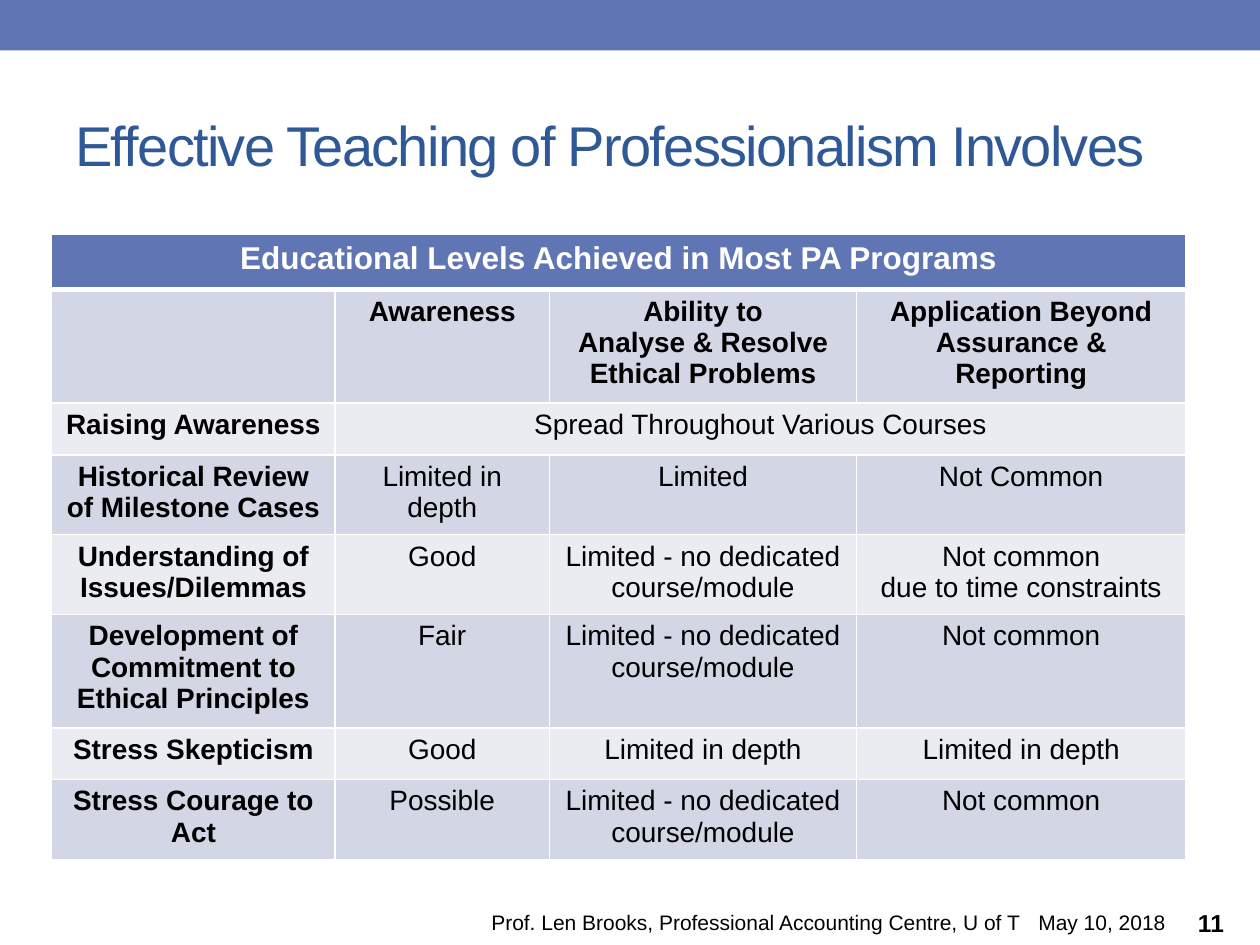
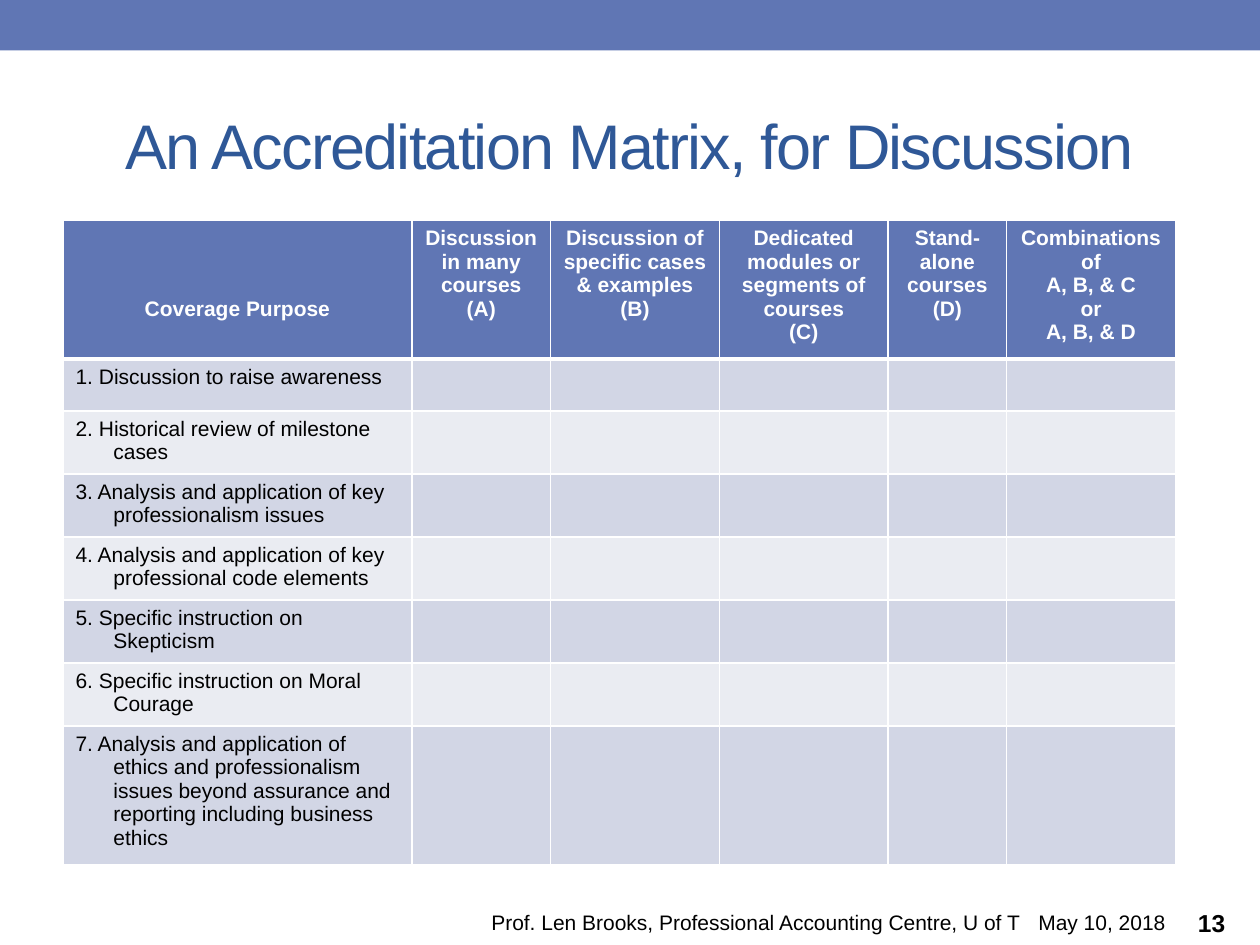
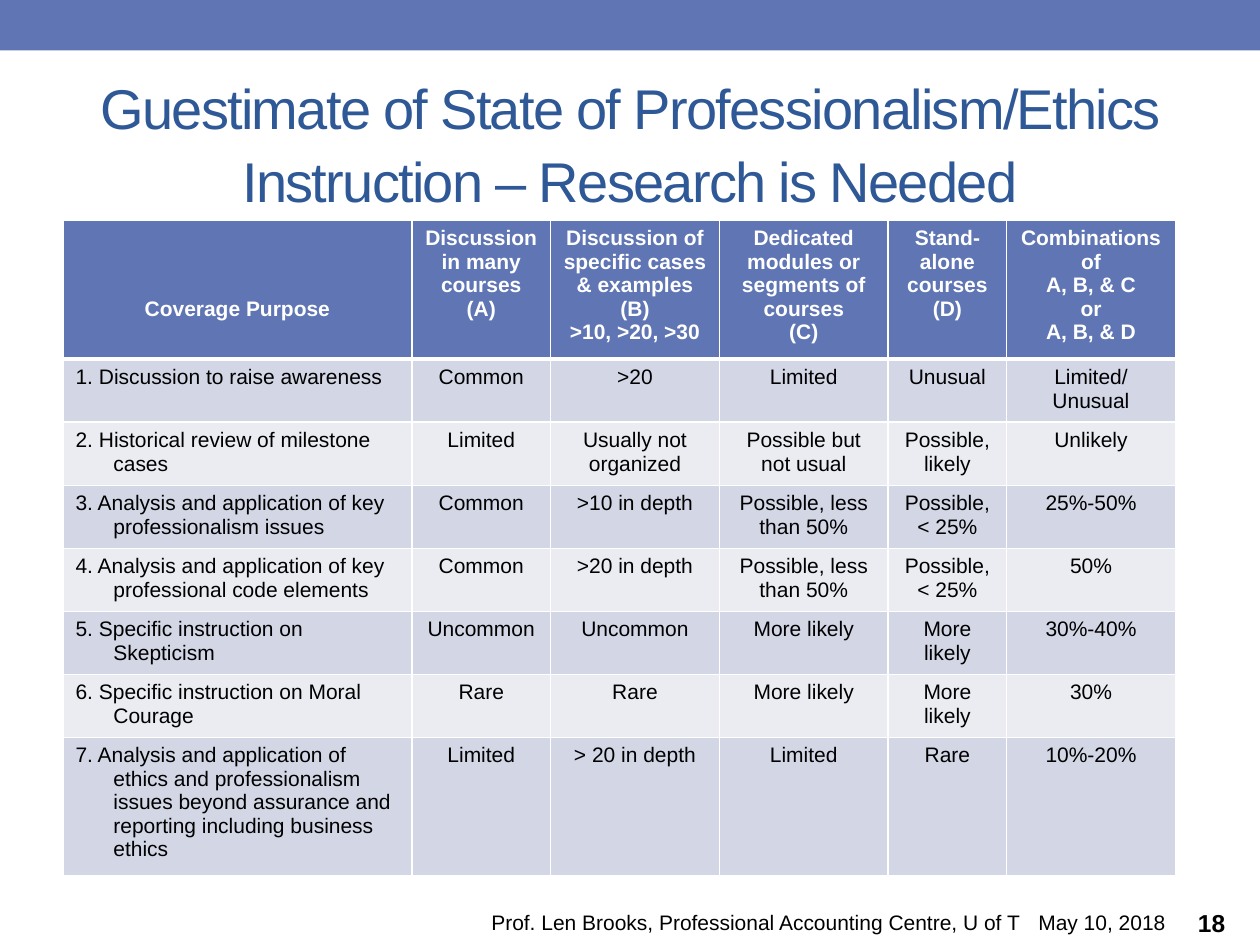
import dataclasses

import lxml.etree
import pptx
import pptx.dml.color
import pptx.enum.shapes
import pptx.enum.text
import pptx.oxml.ns
import pptx.util

Inches = pptx.util.Inches
CENTER = pptx.enum.text.PP_ALIGN.CENTER
LEFT = pptx.enum.text.PP_ALIGN.LEFT


@dataclasses.dataclass(frozen=True)
class Theme:
    font: str = "Arial"
    band: str = "6076B4"
    title: str = "2F5897"
    text: str = "000000"
    white: str = "FFFFFF"
    row_fills: tuple = ("EAECF2", "D2D6E5")
    footer_size: int = 12
    number_size: int = 14
    banner_size: int = 18
    levels_size: int = 16
    matrix_size: int = 12
    border: int = 1
    header_border: int = 3


theme = Theme()


def format_text(text_frame, size, color, bold=False, alignment=LEFT, tracking=0):
    """Style every paragraph; tracking is the letter spacing in points."""
    for paragraph in text_frame.paragraphs:
        paragraph.alignment = alignment
        for run in paragraph.runs:
            run.font.name = theme.font
            run.font.size = pptx.util.Pt(size)
            run.font.bold = bold
            run.font.color.rgb = pptx.dml.color.RGBColor.from_string(color)
            if tracking:
                run.font._element.set("spc", str(round(tracking * 100)))


def style_cell(cell, fill, top, bottom):
    """Give a cell its fill and white borders; top and bottom are points."""
    properties = cell._tc.get_or_add_tcPr()
    widths = {"lnL": theme.border, "lnR": theme.border, "lnT": top, "lnB": bottom}
    for edge, width in widths.items():
        line = lxml.etree.SubElement(
            properties, pptx.oxml.ns.qn(f"a:{edge}"), w=str(pptx.util.Pt(width)))
        solid = lxml.etree.SubElement(line, pptx.oxml.ns.qn("a:solidFill"))
        lxml.etree.SubElement(solid, pptx.oxml.ns.qn("a:srgbClr"), val=theme.white)
    cell.fill.solid()
    cell.fill.fore_color.rgb = pptx.dml.color.RGBColor.from_string(fill)


no_module = "Limited - no dedicated course/module"
levels_rows = [
    ["Educational Levels Achieved in Most PA Programs", "", "", ""],
    ["", "Awareness", "Ability to\nAnalyse & Resolve Ethical Problems",
     "Application Beyond Assurance & Reporting"],
    ["Raising Awareness", "Spread Throughout Various Courses", "", ""],
    ["Historical Review of Milestone Cases", "Limited in depth", "Limited", "Not Common"],
    ["Understanding of Issues/Dilemmas", "Good", no_module,
     "Not common\ndue to time constraints"],
    ["Development of Commitment to Ethical Principles", "Fair", no_module, "Not common"],
    ["Stress Skepticism", "Good", "Limited in depth", "Limited in depth"],
    ["Stress Courage to Act", "Possible", no_module, "Not common"],
]

matrix_header = [
    "Coverage Purpose",
    "Discussion in many courses\n(A)",
    "Discussion of specific cases & examples (B)",
    "Dedicated modules or segments of courses\n(C)",
    "Stand- alone courses\n(D)",
    "Combinations of\nA, B, & C\nor\nA, B, & D",
]
purposes = [
    "1. Discussion to raise awareness",
    "2. Historical review of milestone cases",
    "3. Analysis and application of key professionalism issues",
    "4. Analysis and application of key professional code elements",
    "5. Specific instruction on Skepticism",
    "6. Specific instruction on Moral Courage",
    "7. Analysis and application of ethics and professionalism issues beyond "
    "assurance and reporting including business ethics",
]
estimates = [
    ["Common", ">20", "Limited", "Unusual", "Limited/\nUnusual"],
    ["Limited", "Usually not organized", "Possible but not usual", "Possible, likely",
     "Unlikely"],
    ["Common", ">10 in depth", "Possible, less than 50%", "Possible, < 25%", "25%-50%"],
    ["Common", ">20 in depth", "Possible, less than 50%", "Possible, < 25%", "50%"],
    ["Uncommon", "Uncommon", "More likely", "More likely", "30%-40%"],
    ["Rare", "Rare", "More likely", "More likely", "30%"],
    ["Limited", "> 20 in depth", "Limited", "Rare", "10%-20%"],
]
empty_matrix = [matrix_header] + [[purpose] + [""] * 5 for purpose in purposes]
estimate_header = list(matrix_header)
estimate_header[2] += "\n>10, >20, >30"
estimate_matrix = [estimate_header] + [
    [purpose] + values for purpose, values in zip(purposes, estimates)]

levels_columns = [2.25, 1.7, 2.44, 2.61]
matrix_columns = [2.77, 1.1, 1.34, 1.34, 0.94, 1.34]

# title, title size, title alignment, number, table left, top, height, columns, rows
slides = [
    ("Effective Teaching of Professionalism Involves", 32, LEFT, 11,
     0.41, 1.86, 4.95, levels_columns, levels_rows),
    ("An Accreditation Matrix, for Discussion", 36, CENTER, 13,
     0.5, 1.75, 5.11, matrix_columns, empty_matrix),
    ("Guestimate of State of Professionalism/Ethics Instruction – Research is Needed",
     32, CENTER, 18, 0.5, 1.75, 5.2, matrix_columns, estimate_matrix),
]

presentation = pptx.Presentation()
presentation.slide_width = Inches(10)
presentation.slide_height = Inches(7.5)

for title, title_size, alignment, number, left, top, height, columns, rows in slides:
    slide = presentation.slides.add_slide(presentation.slide_layouts[6])

    band = slide.shapes.add_shape(
        pptx.enum.shapes.MSO_SHAPE.RECTANGLE, 0, 0, Inches(10), Inches(0.4))
    band.shadow.inherit = False
    band.fill.solid()
    band.fill.fore_color.rgb = pptx.dml.color.RGBColor.from_string(theme.band)
    band.line.fill.background()

    title_box = slide.shapes.add_textbox(Inches(0.5), Inches(0.58), Inches(9), Inches(1.08))
    footer_box = slide.shapes.add_textbox(
        Inches(3.74), Inches(7.14), Inches(5.67), Inches(0.36))
    number_box = slide.shapes.add_textbox(
        Inches(9.41), Inches(7.14), Inches(0.57), Inches(0.36))
    for box in (title_box, footer_box, number_box):
        box.text_frame.word_wrap = True
        box.text_frame.vertical_anchor = pptx.enum.text.MSO_ANCHOR.MIDDLE

    title_box.text_frame.text = title
    title_box.text_frame.paragraphs[0].line_spacing = 1.08
    format_text(title_box.text_frame, title_size, theme.title,
                alignment=alignment, tracking=-1)

    footer = footer_box.text_frame.paragraphs[0]
    for part in ("Prof. Len Brooks, Professional Accounting Centre, U of T", " ",
                 "May 10, 2018"):
        footer.add_run().text = part
    format_text(footer_box.text_frame, theme.footer_size, theme.text, alignment=CENTER)
    footer.runs[1].font._element.set("spc", "667")

    number_box.text_frame.text = str(number)
    format_text(number_box.text_frame, theme.number_size, theme.text, bold=True)

    is_levels = rows is levels_rows
    frame = slide.shapes.add_table(
        len(rows), len(columns), Inches(left), Inches(top),
        Inches(sum(columns)), Inches(height))
    table = frame.table
    for column, width in zip(table.columns, columns):
        column.width = Inches(width)
    for row in table.rows:
        row.height = Inches(0.41)
    if is_levels:
        table.rows[0].height = Inches(0.44)
        table.cell(0, 0).merge(table.cell(0, 3))
        table.cell(2, 1).merge(table.cell(2, 3))
    frame.height = Inches(height)

    for row_index, values in enumerate(rows):
        is_header = row_index == 0
        for column_index, value in enumerate(values):
            cell = table.cell(row_index, column_index)
            style_cell(
                cell,
                theme.band if is_header else theme.row_fills[row_index % 2],
                theme.header_border if row_index == 1 else theme.border,
                theme.header_border if is_header else theme.border)
            if not value:
                continue
            cell.text_frame.text = value
            is_purpose = not is_levels and not is_header and column_index == 0
            if is_levels:
                size = theme.banner_size if is_header else theme.levels_size
                bold = row_index < 2 or column_index == 0
            else:
                size = theme.matrix_size
                bold = is_header
            format_text(cell.text_frame, size, theme.white if is_header else theme.text,
                        bold, LEFT if is_purpose else CENTER)
            if is_purpose:
                paragraph_properties = cell.text_frame.paragraphs[0]._p.get_or_add_pPr()
                paragraph_properties.set("marL", str(Inches(0.3)))
                paragraph_properties.set("indent", str(-Inches(0.3)))

    if not is_levels:
        table.cell(0, 0).margin_top = Inches(0.61)

presentation.save("out.pptx")
